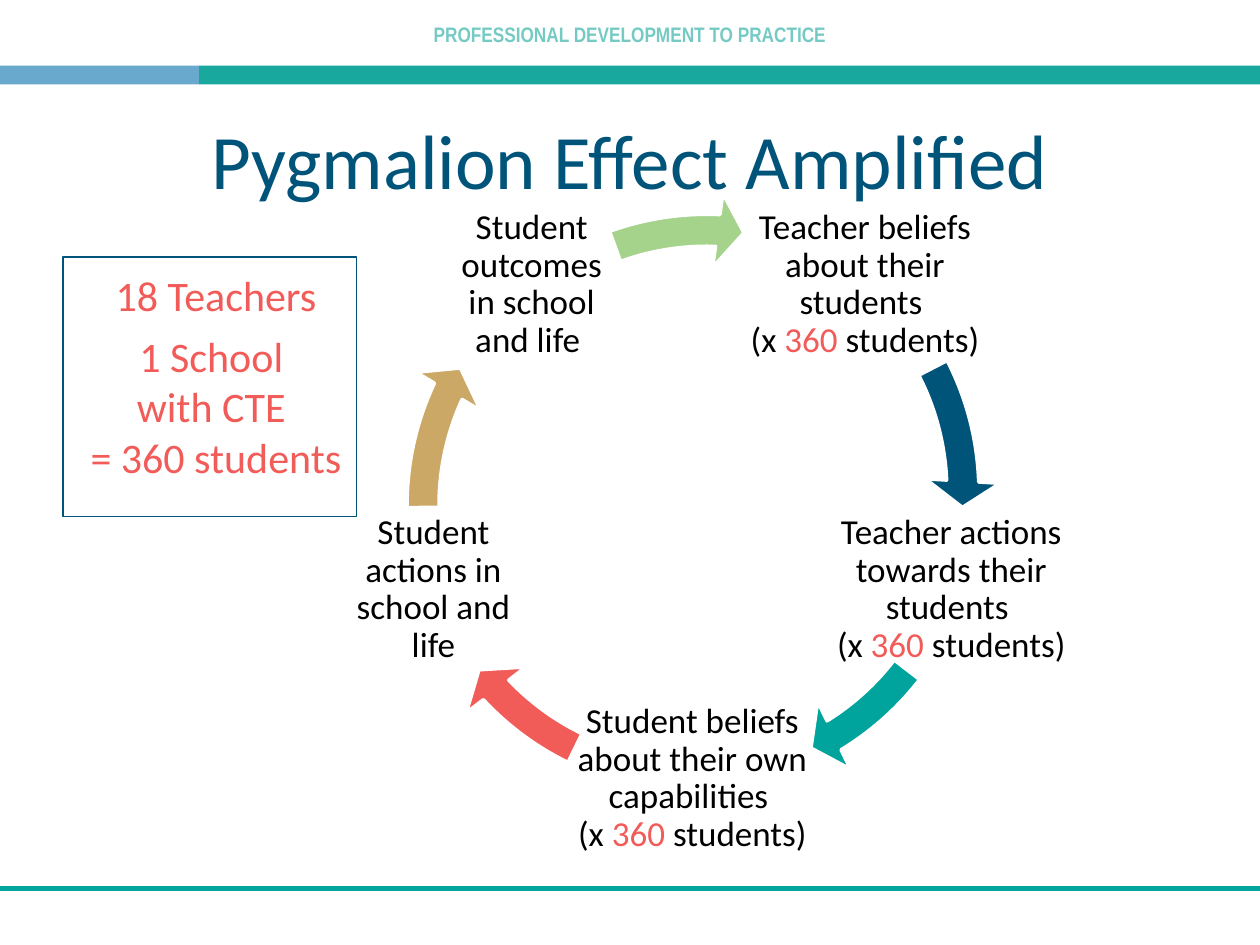
from lxml import etree
from pptx import Presentation
from pptx.dml.color import RGBColor
from pptx.enum.shapes import MSO_CONNECTOR, MSO_SHAPE
from pptx.enum.text import MSO_ANCHOR, PP_ALIGN
from pptx.oxml.ns import qn
from pptx.util import Inches, Pt

RECT = MSO_SHAPE.RECTANGLE
CIRCULAR_ARROW = MSO_SHAPE.CIRCULAR_ARROW
STRAIGHT = MSO_CONNECTOR.STRAIGHT
CENTER = PP_ALIGN.CENTER
TOP, MIDDLE = MSO_ANCHOR.TOP, MSO_ANCHOR.MIDDLE

NAVY, TEAL, CORAL = "005479", "00A49D", "F15B58"
BAND_BLUE, BAND_TEAL = "69A9CD", "19A89E"
SAND, GREEN, BLACK, WHITE = "CCA866", "A5D38C", "000000", "FFFFFF"

ARROW_SIZE = 4.88
DEGREE = 0.6  # one degree in the units of shape adjustments

# Text box, runs with colours
CYCLE_STEPS = [
    ((5.91, 1.61, 1.91, 1.3), [("Teacher beliefs about their students \n(x ", BLACK),
                               ("360 ", CORAL), ("students)", BLACK)]),
    ((6.43, 4.03, 2.24, 1.3), [("Teacher actions towards their students \n(x ", BLACK),
                               ("360", CORAL), (" students)", BLACK)]),
    ((4.55, 5.5, 1.89, 1.36), [("Student beliefs about their own capabilities \n(x ", BLACK),
                               ("360", CORAL), (" students)", BLACK)]),
    ((2.79, 4.03, 1.3, 1.3), [("Student actions in school and life", BLACK)]),
    ((3.57, 1.61, 1.3, 1.3), [("Student outcomes in school and life ", BLACK)]),
]
# Left, top, start angle, end angle, colour
CYCLE_ARROWS = [
    (3.06, 1.46, 332.78, 357.81, NAVY),
    (3.06, 1.57, 37.56, 58.48, TEAL),
    (3.06, 1.57, 115.92, 136.84, CORAL),
    (3.06, 1.57, 179.52, 204.96, SAND),
    (3.17, 1.53, 250.12, 272.31, GREEN),
]


def rgb(color):
    return RGBColor.from_string(color)


def inches(box):
    return [Inches(length) for length in box]


def set_frame(shape, inset_x, inset_y, anchor):
    frame = shape.text_frame
    frame.word_wrap = True
    frame.margin_left = frame.margin_right = Inches(inset_x)
    frame.margin_top = frame.margin_bottom = Inches(inset_y)
    frame.vertical_anchor = anchor
    return frame


def write(paragraph, text, size, color, font="Calibri", bold=False):
    """Add centred text; each newline becomes a line break."""
    paragraph.alignment = CENTER
    for number, line in enumerate(text.split("\n")):
        if number:
            paragraph.add_line_break()
        run = paragraph.add_run()
        run.text = line
        run.font.size, run.font.name, run.font.bold = Pt(size), font, bold
        run.font.color.rgb = rgb(color)
    return run


def add_shape(slide, kind, box, fill=None, line=None, width=0):
    shape = slide.shapes.add_shape(kind, *inches(box))
    shape.shadow.inherit = False
    if fill:
        shape.fill.solid()
        shape.fill.fore_color.rgb = rgb(fill)
    else:
        shape.fill.background()
    if line:
        shape.line.color.rgb = rgb(line)
        shape.line.width = Pt(width)
    else:
        shape.line.fill.background()
    return shape


def add_header(slide, box):
    left, top, width, height = box
    # Faded banner text
    banner = slide.shapes.add_textbox(*inches((left, top, width, 0.4)))
    frame = set_frame(banner, 0.07, 0.04, TOP)
    run = write(frame.paragraphs[0], "PROFESSIONAL DEVELOPMENT TO PRACTICE",
                12, BAND_TEAL, "Arial Narrow", True)
    tint = next(run.font._element.iter(qn("a:srgbClr")))
    etree.SubElement(tint, qn("a:alpha"), val="60000")
    # Two-colour band
    band, split = 0.15, 1.58
    band_top = top + height - band
    add_shape(slide, RECT, (left, band_top, split, band), BAND_BLUE)
    add_shape(slide, RECT, (left + split, band_top, width - split, band), BAND_TEAL)


def add_footer_rule(slide, left, top, width):
    rule = slide.shapes.add_connector(STRAIGHT, *inches((left, top, left + width, top)))
    rule.line.color.rgb = rgb(TEAL)
    rule.line.width = Pt(3)
    etree.SubElement(rule._element.spPr, qn("a:effectLst"))


def add_title(slide, box):
    title = slide.shapes.add_textbox(*inches(box))
    frame = set_frame(title, 0.1, 0.05, MIDDLE)
    write(frame.paragraphs[0], "Pygmalion Effect Amplified", 44, NAVY)


def add_school_box(slide, box):
    school = add_shape(slide, RECT, box, line=NAVY, width=0.75)
    frame = set_frame(school, 0.1, 0.1, TOP)
    teachers, students = frame.paragraphs[0], frame.add_paragraph()
    write(teachers, "18 Teachers", 24, CORAL)
    write(students, "1 School \nwith CTE \n= 360 students", 24, CORAL)
    students.space_before = Pt(6)
    for paragraph in (teachers, students):
        properties = paragraph._p.get_or_add_pPr()
        properties.set("marL", str(Inches(0.1)))
        properties.set("indent", "0")


def add_step(slide, box, runs):
    step = slide.shapes.add_textbox(*inches(box))
    paragraph = set_frame(step, 0.03, 0.03, MIDDLE).paragraphs[0]
    paragraph.line_spacing = 0.9
    for text, color in runs:
        write(paragraph, text, 20, color)


def add_cycle_arrow(slide, box, start, end, color):
    arrow = add_shape(slide, CIRCULAR_ARROW, box, color, WHITE, 2)
    # Thickness, head angle, end angle, start angle, head width
    values = (0.052, 5.6 * DEGREE, end * DEGREE, start * DEGREE, 0.061)
    for number, value in enumerate(values):
        arrow.adjustments[number] = value


def add_cycle(slide):
    for (box, runs), (left, top, start, end, color) in zip(CYCLE_STEPS, CYCLE_ARROWS):
        add_step(slide, box, runs)
        add_cycle_arrow(slide, (left, top, ARROW_SIZE, ARROW_SIZE), start, end, color)


def main():
    deck = Presentation()
    deck.slide_width, deck.slide_height = Inches(10), Inches(7.5)
    slide = deck.slides.add_slide(deck.slide_layouts[6])
    add_header(slide, (0, 0.13, 10, 0.54))
    add_footer_rule(slide, 0, 7.05, 10)
    add_title(slide, (0.5, 0.66, 9, 1.2))
    add_school_box(slide, (0.5, 2.04, 2.33, 2.06))
    add_cycle(slide)
    deck.save("out.pptx")


if __name__ == "__main__":
    main()
